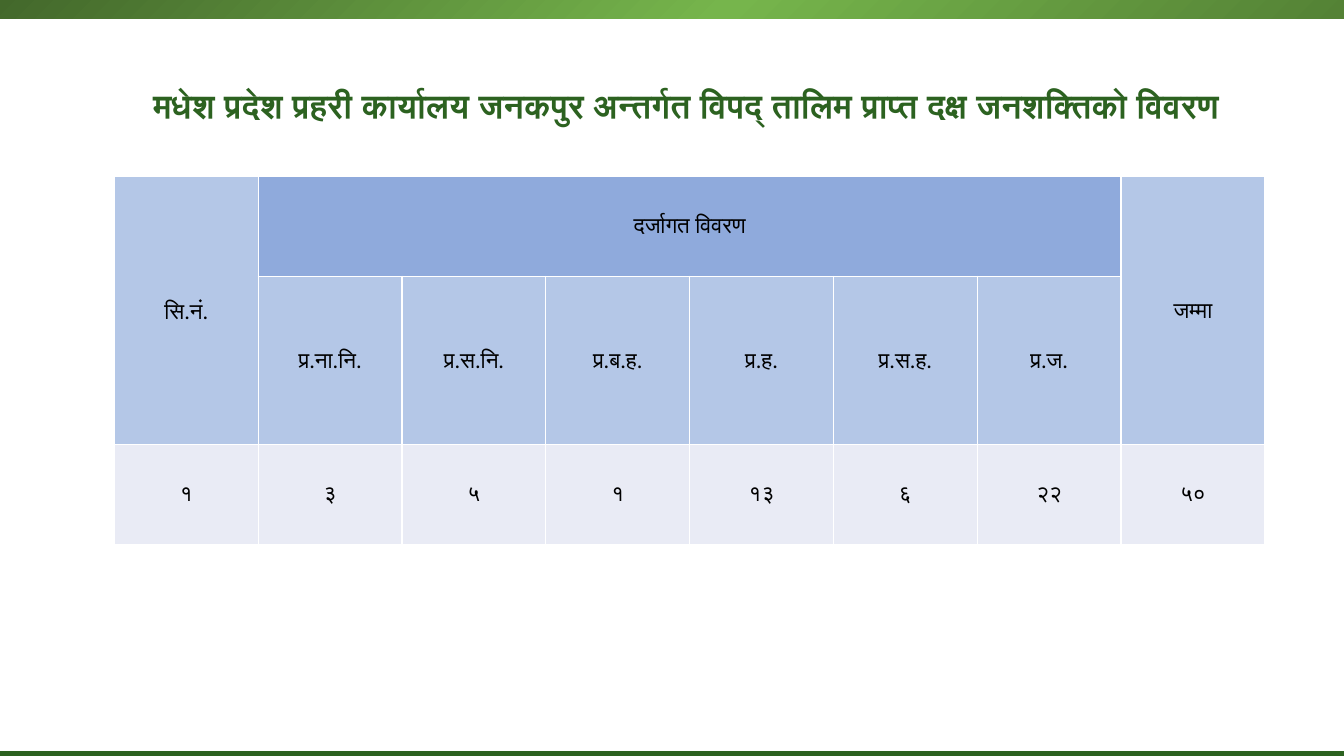
import pptx
import pptx.util
import pptx.dml.color
import pptx.enum.shapes
import pptx.enum.text
import pptx.oxml
import pptx.oxml.ns

Pt = pptx.util.Pt
RGB = pptx.dml.color.RGBColor
ALIGN = pptx.enum.text.PP_ALIGN
MID = pptx.enum.text.MSO_ANCHOR.MIDDLE
RECT = pptx.enum.shapes.MSO_SHAPE.RECTANGLE
NS = pptx.oxml.ns.nsdecls("a")

GREEN = RGB(0x2C, 0x62, 0x20)
MOSS = RGB(0x54, 0x82, 0x35)
LEAF = RGB(0x76, 0xB5, 0x4C)
DARK = RGB(0x43, 0x68, 0x2B)
BLACK = RGB(0, 0, 0)
WHITE = RGB(0xFF, 0xFF, 0xFF)
SKY = RGB(0xB4, 0xC7, 0xE7)
BLUE = RGB(0x8F, 0xAA, 0xDC)
PALE = RGB(0xE9, 0xEB, 0xF5)


def apply(item, style):
    for key, value in style.items():
        setattr(item, key, value)


class Page:
    """Holds the text styles and the current slide."""
    head = {"name": "Calibri", "size": Pt(24), "bold": True}
    body = {"name": "Calibri", "size": Pt(16), "bold": False}

    def __init__(self, deck):
        self.slide = deck.slides.add_slide(deck.slide_layouts[5])

    def bar(self, x, y, w, h, color):
        bar = self.slide.shapes.add_shape(RECT, Pt(x), Pt(y), Pt(w), Pt(h))
        bar.shadow.inherit = False
        bar.line.fill.background()
        bar.fill.solid()
        bar.fill.fore_color.rgb = color
        return bar

    def glow(self, bar, stops):
        """Radial gradient centred on the lower right corner."""
        marks = "".join(
            f'<a:gs pos="{pos * 1000}"><a:srgbClr val="{color}"/></a:gs>'
            for pos, color in stops)
        grad = pptx.oxml.parse_xml(
            f'<a:gradFill {NS} rotWithShape="1"><a:gsLst>{marks}</a:gsLst>'
            '<a:path path="circle"><a:fillToRect l="100000" t="100000"/>'
            '</a:path></a:gradFill>')
        props = bar.fill._xPr
        props.replace(props.find(pptx.oxml.ns.qn("a:solidFill")), grad)

    def title(self, text, x, y, w, h):
        title = self.slide.shapes.title
        apply(title, {"left": Pt(x), "top": Pt(y),
                      "width": Pt(w), "height": Pt(h)})
        frame = title.text_frame
        frame.text = text
        # The deep lower margin lifts the line within its box
        apply(frame, {"vertical_anchor": MID, "word_wrap": True,
                      "margin_bottom": Pt(26)})
        para = frame.paragraphs[0]
        apply(para, {"alignment": ALIGN.CENTER, "line_spacing": 1.15,
                     "space_after": Pt(10)})
        apply(para.runs[0].font, self.head)
        para.runs[0].font.color.rgb = GREEN

    def cell(self, cell, text, color):
        cell.fill.solid()
        cell.fill.fore_color.rgb = color
        apply(cell, {"vertical_anchor": MID, "margin_left": Pt(0.75),
                     "margin_right": Pt(0.75), "margin_top": Pt(0.75),
                     "margin_bottom": Pt(0)})
        para = cell.text_frame.paragraphs[0]
        para.alignment = ALIGN.CENTER
        if text:
            run = para.add_run()
            run.text = text
            apply(run.font, self.body)
            run.font.color.rgb = BLACK
        # Thin white borders come before the fill
        for i, side in enumerate(("lnL", "lnR", "lnT", "lnB")):
            line = pptx.oxml.parse_xml(
                f'<a:{side} {NS} w="12700"><a:solidFill>'
                f'<a:srgbClr val="{WHITE}"/></a:solidFill></a:{side}>')
            cell._tc.get_or_add_tcPr().insert(i, line)

    def table(self, rows, fills, spans, x, y, width, heights):
        count = len(rows[0])
        table = self.slide.shapes.add_table(
            len(rows), count, Pt(x), Pt(y),
            Pt(width * count), Pt(sum(heights))).table
        for col in table.columns:
            col.width = Pt(width)
        for r, row in enumerate(rows):
            table.rows[r].height = Pt(heights[r])
            for c, text in enumerate(row):
                fill = BLUE if (r, c) == (0, 1) else fills[r]
                self.cell(table.cell(r, c), text, fill)
        for first, last in spans:
            table.cell(*first).merge(table.cell(*last))


def main():
    deck = pptx.Presentation()
    apply(deck, {"slide_width": Pt(960), "slide_height": Pt(540)})
    page = Page(deck)

    # Bars along the lower and upper edges
    page.bar(-0.5, 536.5, 960.5, 3.5, GREEN)
    top = page.bar(-0.5, -2, 960.5, 15.5, MOSS)
    page.glow(top, [(0, MOSS), (46, LEAF), (100, DARK)])

    # Title
    page.title("मधेश प्रदेश प्रहरी कार्यालय जनकपुर अन्तर्गत विपद् तालिम "
               "प्राप्त दक्ष जनशक्तिको विवरण", 58.5, 60.5, 863, 47)

    # Trained staff by rank
    rows = [
        ["सि.नं.", "दर्जागत विवरण", "", "", "", "", "", "जम्मा"],
        ["", "प्र.ना.नि.", "प्र.स.नि.", "प्र.ब.ह.", "प्र.ह.", "प्र.स.ह.",
         "प्र.ज.", ""],
        ["१", "३", "५", "१", "१३", "६", "२२", "५०"],
    ]
    spans = [((0, 0), (1, 0)), ((0, 1), (0, 6)), ((0, 7), (1, 7))]
    page.table(rows, [SKY, SKY, PALE], spans, 81.7, 126.3, 102.75,
               [71, 120.5, 71])

    deck.save("out.pptx")


if __name__ == "__main__":
    main()
